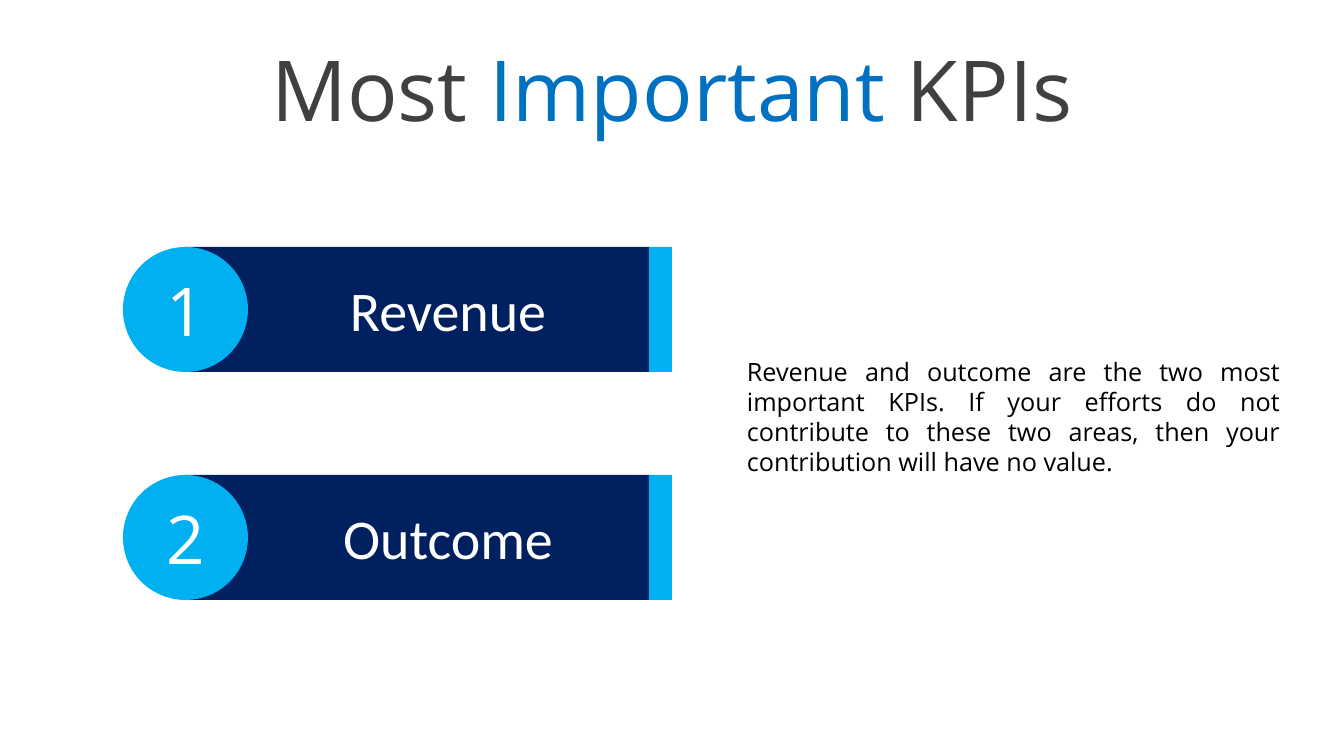
"""Build the slide presenting the two most important KPIs."""
from pptx import Presentation
from pptx.dml.color import RGBColor
from pptx.enum.shapes import MSO_SHAPE
from pptx.enum.text import MSO_ANCHOR, MSO_AUTO_SIZE, PP_ALIGN
from pptx.util import Emu, Pt

PX = 914400 / 100.8
NAVY = RGBColor(0x00, 0x20, 0x60)
SKY = RGBColor(0x00, 0xB0, 0xF0)
BLUE = RGBColor(0x00, 0x70, 0xC0)
GRAY = RGBColor(0x40, 0x40, 0x40)
WHITE = RGBColor(0xFF, 0xFF, 0xFF)
BLACK = RGBColor(0x00, 0x00, 0x00)


def box(*lengths):
    return [Emu(round(length * PX)) for length in lengths]


def write(frame, pieces, size, font, align):
    frame.word_wrap = True
    paragraph = frame.paragraphs[0]
    paragraph.alignment = align
    for words, color in pieces:
        run = paragraph.add_run()
        run.text = words
        run.font.size = Pt(size)
        run.font.name = font
        run.font.color.rgb = color


deck = Presentation()
deck.slide_width, deck.slide_height = box(1344, 756)
slide = deck.slides.add_slide(deck.slide_layouts[5])
shapes = slide.shapes

title = shapes.title
title.left, title.top, title.width, title.height = box(168, 43, 1008, 102)
title.text_frame.auto_size = MSO_AUTO_SIZE.NONE
title.text_frame.vertical_anchor = MSO_ANCHOR.BOTTOM
title.text_frame.paragraphs[0].line_spacing = 0.9
write(title.text_frame, [("Most ", GRAY), ("Important ", BLUE), ("KPIs", GRAY)],
      60, "Open Sans", PP_ALIGN.CENTER)

for number, kpi in enumerate(["Revenue", "Outcome"], start=1):
    top = 247 + (number - 1) * 228
    for kind, left, width, color in [
        (MSO_SHAPE.RECTANGLE, 185, 464, NAVY),
        (MSO_SHAPE.RECTANGLE, 649, 23, SKY),
        (MSO_SHAPE.OVAL, 123, 125, SKY),
    ]:
        part = shapes.add_shape(kind, *box(left, top, width, 125))
        part.shadow.inherit = False
        part.fill.solid()
        part.fill.fore_color.rgb = color
        part.line.fill.background()
        if kind == MSO_SHAPE.OVAL:
            part.text_frame.vertical_anchor = MSO_ANCHOR.MIDDLE
            write(part.text_frame, [(str(number), WHITE)], 48, "Open Sans", PP_ALIGN.CENTER)

    label = shapes.add_textbox(*box(278, top + 24, 340, 78))
    label.text_frame.auto_size = MSO_AUTO_SIZE.SHAPE_TO_FIT_TEXT
    write(label.text_frame, [(kpi, WHITE)], 40, "Calibri", PP_ALIGN.CENTER)

summary = shapes.add_textbox(*box(737, 351, 553, 132))
summary.text_frame.auto_size = MSO_AUTO_SIZE.SHAPE_TO_FIT_TEXT
write(summary.text_frame, [(
    "Revenue and outcome are the two most important KPIs. If your efforts do not "
    "contribute to these two areas, then your contribution will have no value.", BLACK)],
    18, "Open Sans", PP_ALIGN.JUSTIFY)

deck.save("out.pptx")
